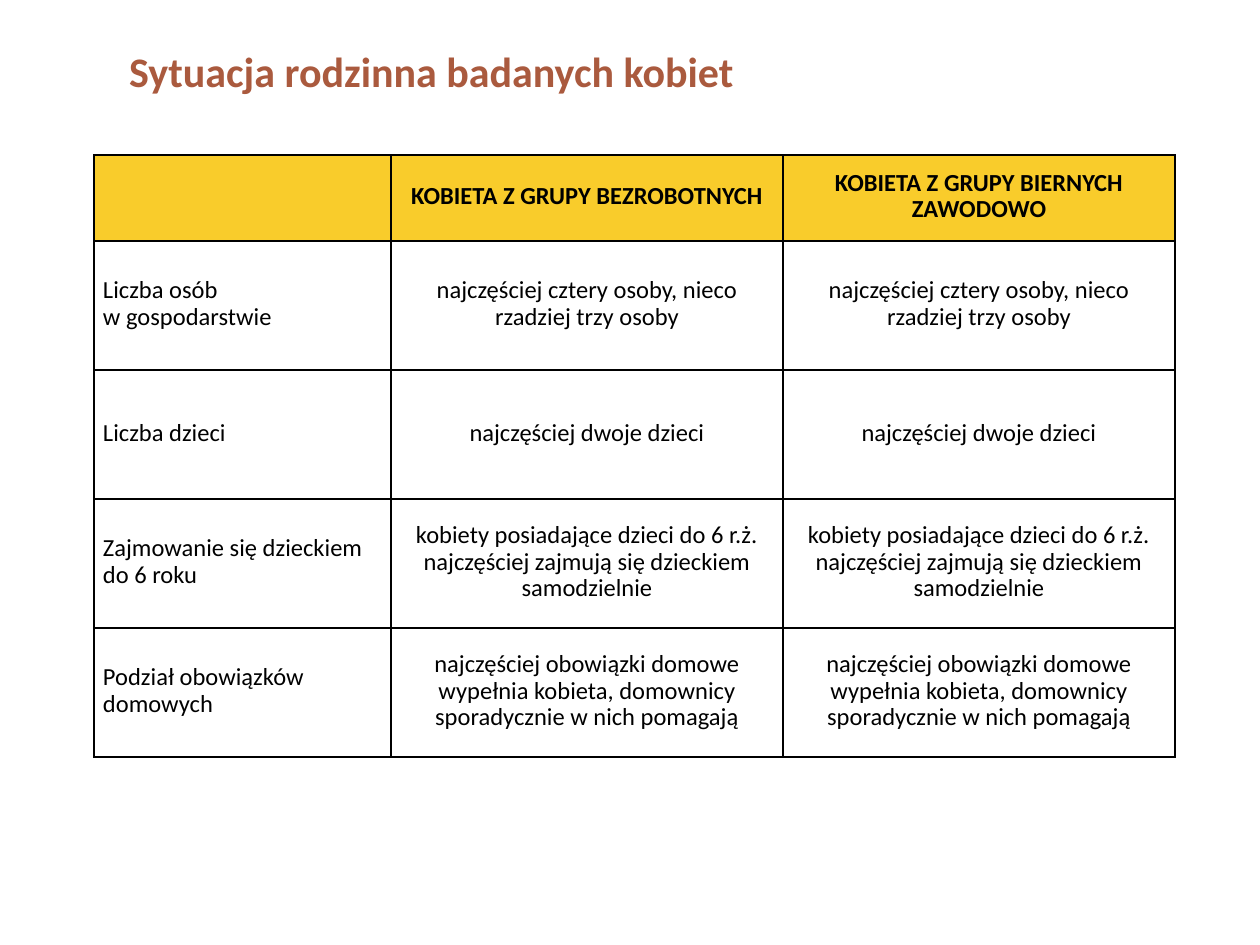
from lxml import etree
from pptx import Presentation
from pptx.dml.color import RGBColor
from pptx.enum.text import MSO_ANCHOR, PP_ALIGN
from pptx.oxml.ns import qn
from pptx.util import Pt

EMU_PER_PX = 914400 / 126
FONT = "Calibri"
BROWN = RGBColor(0xAA, 0x5A, 0x3E)
YELLOW = RGBColor(0xF9, 0xCC, 0x2B)
BLACK = RGBColor(0, 0, 0)
LEFT, CENTER = PP_ALIGN.LEFT, PP_ALIGN.CENTER
MIDDLE = MSO_ANCHOR.MIDDLE

COLUMN_WIDTHS = [297, 392, 392]
HEADER_HEIGHT, ROW_HEIGHT = 86, 129
HEADERS = ["", "KOBIETA Z GRUPY BEZROBOTNYCH", "KOBIETA Z GRUPY BIERNYCH ZAWODOWO"]
# Both groups gave the same answer to every topic.
ANSWERS = [
    ("Liczba osób\nw gospodarstwie",
     "najczęściej cztery osoby, nieco rzadziej trzy osoby"),
    ("Liczba dzieci", "najczęściej dwoje dzieci"),
    ("Zajmowanie się dzieckiem do 6 roku",
     "kobiety posiadające dzieci do 6 r.ż. najczęściej zajmują się dzieckiem samodzielnie"),
    ("Podział obowiązków domowych",
     "najczęściej obowiązki domowe wypełnia kobieta, domownicy sporadycznie w nich pomagają"),
]


def px(length):
    return round(length * EMU_PER_PX)


def write(paragraph, text, size, color, bold, align):
    """Add one run per line of text, with line breaks between them."""
    paragraph.alignment = align
    for index, line in enumerate(text.split("\n")):
        if index:
            paragraph.add_line_break()
        run = paragraph.add_run()
        run.text = line
        run.font.name = FONT
        run.font.size = Pt(size)
        run.font.bold = bold
        run.font.color.rgb = color


def add_title(slide, text):
    frame = slide.shapes.add_textbox(px(15), px(16), px(833), px(110)).text_frame
    frame.word_wrap = True
    frame.vertical_anchor = MIDDLE
    write(frame.paragraphs[0], text, 24, BROWN, True, CENTER)


def add_borders(cell):
    properties = cell._tc.get_or_add_tcPr()
    for position, side in enumerate(("a:lnL", "a:lnR", "a:lnT", "a:lnB")):
        line = etree.Element(qn(side), w=str(Pt(1)))
        fill = etree.SubElement(line, qn("a:solidFill"))
        etree.SubElement(fill, qn("a:srgbClr"), val=str(BLACK))
        properties.insert(position, line)


def fill_cell(cell, text, is_header, align):
    cell.margin_left = cell.margin_right = px(9)
    cell.margin_top = cell.margin_bottom = 0
    cell.vertical_anchor = MIDDLE
    if is_header:
        cell.fill.solid()
        cell.fill.fore_color.rgb = YELLOW
    else:
        cell.fill.background()
    add_borders(cell)
    if text:
        paragraph = cell.text_frame.paragraphs[0]
        paragraph.line_spacing = Pt(15)
        write(paragraph, text, 14, BLACK, is_header, align)


def add_family_table(slide):
    rows = [HEADERS] + [[topic, answer, answer] for topic, answer in ANSWERS]
    heights = [HEADER_HEIGHT] + [ROW_HEIGHT] * len(ANSWERS)
    table = slide.shapes.add_table(
        len(rows), len(COLUMN_WIDTHS), px(94), px(155),
        px(sum(COLUMN_WIDTHS)), px(sum(heights))).table
    for column, width in zip(table.columns, COLUMN_WIDTHS):
        column.width = px(width)
    for row_index, (texts, height) in enumerate(zip(rows, heights)):
        table.rows[row_index].height = px(height)
        for column_index, text in enumerate(texts):
            fill_cell(table.cell(row_index, column_index), text,
                      row_index == 0, CENTER if column_index else LEFT)


def main():
    presentation = Presentation()
    presentation.slide_width = px(1260)
    presentation.slide_height = px(945)
    slide = presentation.slides.add_slide(presentation.slide_layouts[6])
    add_title(slide, "Sytuacja rodzinna badanych kobiet")
    add_family_table(slide)
    presentation.save("out.pptx")


if __name__ == "__main__":
    main()
